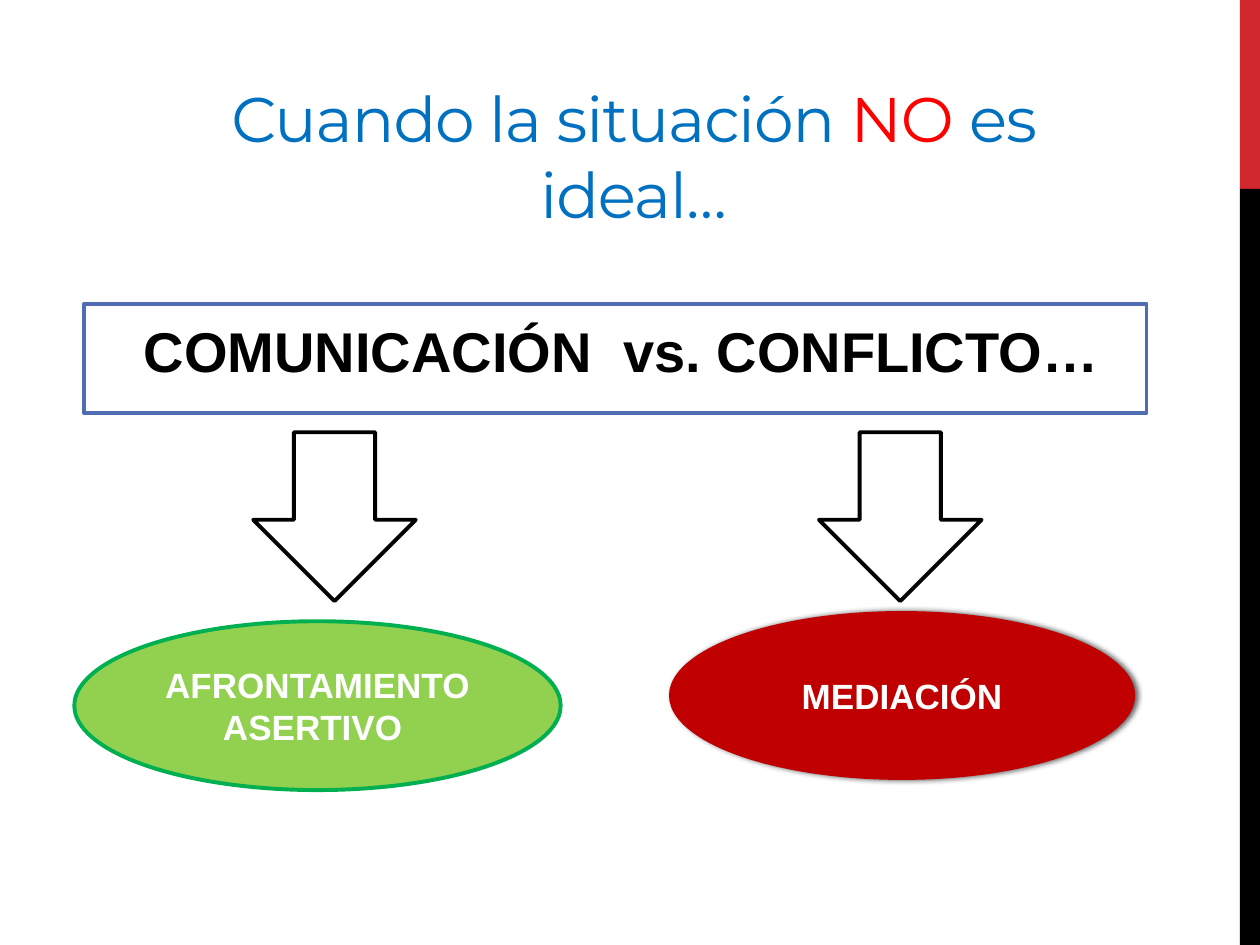
import pptx
import pptx.dml.color
import pptx.enum.shapes
import pptx.enum.text
import pptx.util
from lxml import etree

Pt = pptx.util.Pt
RGBColor = pptx.dml.color.RGBColor
SHAPE = pptx.enum.shapes.MSO_SHAPE
ALIGN = pptx.enum.text.PP_ALIGN
ANCHOR = pptx.enum.text.MSO_ANCHOR

WHITE = RGBColor(0xFF, 0xFF, 0xFF)
BLACK = RGBColor(0, 0, 0)
BAND_RED = RGBColor(0xD1, 0x28, 0x2E)
TITLE_BLUE = RGBColor(0x00, 0x70, 0xC0)
ALERT_RED = RGBColor(0xFF, 0, 0)
FRAME_BLUE = RGBColor(0x4F, 0x6D, 0xB0)
DARK_RED = RGBColor(0xC0, 0, 0)
LIGHT_GREEN = RGBColor(0x92, 0xD0, 0x50)
GREEN = RGBColor(0x00, 0xB0, 0x50)

DRAWING_NS = "{http://schemas.openxmlformats.org/drawingml/2006/main}"


def add_run(paragraph, text, *, font="Arial", size=20, color=WHITE,
            bold=False, spacing=0):
    """Append formatted text; spacing is the letter spacing in points."""
    run = paragraph.add_run()
    run.text = text
    run.font.name = font
    run.font.size = Pt(size)
    run.font.bold = bold
    run.font.color.rgb = color
    if spacing:
        run.font._element.set("spc", str(round(spacing * 100)))


def add_box(slide, left, top, width, height):
    box = slide.shapes.add_textbox(Pt(left), Pt(top), Pt(width), Pt(height))
    box.text_frame.word_wrap = True
    return box


def add_figure(slide, kind, left, top, width, height, fill, line=None):
    figure = slide.shapes.add_shape(kind, Pt(left), Pt(top), Pt(width), Pt(height))
    figure.shadow.inherit = False
    figure.fill.solid()
    figure.fill.fore_color.rgb = fill
    if line is None:
        figure.line.fill.background()
    else:
        figure.line.color.rgb = line
        figure.line.width = Pt(2.25)
    return figure


def add_oval(slide, left, top, width, lines, fill, line=None):
    oval = add_figure(slide, SHAPE.OVAL, left, top, width, 96.5, fill, line)
    frame = oval.text_frame
    frame.vertical_anchor = ANCHOR.MIDDLE
    for index, text in enumerate(lines):
        paragraph = frame.add_paragraph() if index else frame.paragraphs[0]
        paragraph.alignment = ALIGN.CENTER
        add_run(paragraph, text, bold=True)
    return oval


def add_soft_shadow(figure):
    effects = figure._element.spPr.find(DRAWING_NS + "effectLst")
    shadow = etree.SubElement(effects, DRAWING_NS + "outerShdw",
                              blurRad=str(Pt(3)), dist=str(Pt(1.5)), dir="0")
    color = etree.SubElement(shadow, DRAWING_NS + "srgbClr", val=str(BLACK))
    etree.SubElement(color, DRAWING_NS + "alpha", val="60000")


def add_title(slide):
    title = add_box(slide, 75.6, 26, 573, 108)
    title.text_frame.vertical_anchor = ANCHOR.BOTTOM
    title.text_frame.margin_bottom = Pt(2)
    paragraph = title.text_frame.paragraphs[0]
    paragraph.alignment = ALIGN.CENTER
    for text, color in (("Cuando la situación ", TITLE_BLUE),
                        ("NO", ALERT_RED),
                        (" es ideal…", TITLE_BLUE)):
        add_run(paragraph, text, font="Montserrat", size=36, color=color,
                spacing=-0.6)


def add_topic(slide):
    topic = add_box(slide, 48.2, 173.5, 607, 62.6)
    topic.line.color.rgb = FRAME_BLUE
    topic.line.width = Pt(2.25)
    topic.text_frame.margin_left = Pt(33.9)
    topic.text_frame.margin_right = Pt(0)
    topic.text_frame.margin_top = Pt(7.3)
    paragraph = topic.text_frame.paragraphs[0]
    # The gap before "vs." is a single, widened space
    for text, spacing in (("COMUNICACIÓN", 0), (" ", 8.9), ("vs. CONFLICTO…", 0)):
        add_run(paragraph, text, size=32, color=BLACK, bold=True, spacing=spacing)


def main():
    presentation = pptx.Presentation()
    presentation.slide_width = Pt(720)
    presentation.slide_height = Pt(540)
    slide = presentation.slides.add_slide(presentation.slide_layouts[6])

    # Side band
    add_figure(slide, SHAPE.RECTANGLE, 708.5, 0, 11.5, 108, BAND_RED)
    add_figure(slide, SHAPE.RECTANGLE, 708.5, 108, 11.5, 432, BLACK)

    # Heading and topic
    add_title(slide)
    add_topic(slide)

    # Arrows to the two responses
    for left in (468, 144.7):
        add_figure(slide, SHAPE.DOWN_ARROW, left, 247, 92.9, 96.5, WHITE, BLACK)

    # Responses
    mediation = add_oval(slide, 382.3, 349.2, 266.4, ["MEDIACIÓN"], DARK_RED)
    add_soft_shadow(mediation)
    add_oval(slide, 42.5, 355, 277.9, ["AFRONTAMIENTO", "ASERTIVO "],
             LIGHT_GREEN, GREEN)

    presentation.save("out.pptx")


if __name__ == "__main__":
    main()
